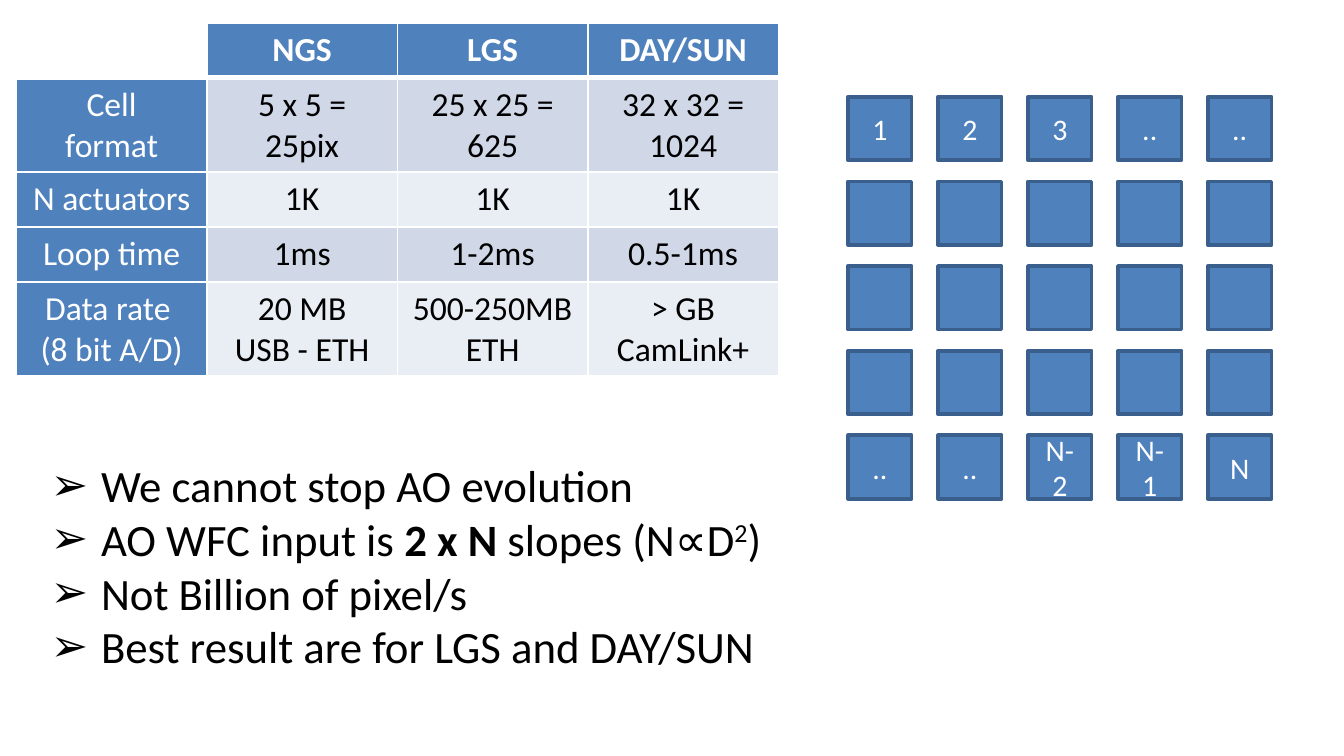
from lxml.etree import SubElement
from pptx import Presentation
from pptx.dml.color import RGBColor
from pptx.enum.shapes import MSO_SHAPE
from pptx.enum.text import MSO_ANCHOR, MSO_AUTO_SIZE, PP_ALIGN
from pptx.oxml.ns import qn
from pptx.util import Cm, Pt

BLUE = RGBColor(0x4F, 0x81, 0xBD)
EDGE = RGBColor(0x3A, 0x5F, 0x8C)
DARK = RGBColor(0xD0, 0xD8, 0xE8)
PALE = RGBColor(0xE9, 0xED, 0xF4)
WHITE = RGBColor(0xFF, 0xFF, 0xFF)
BLACK = RGBColor(0, 0, 0)

SPECS = [
    ["", "NGS", "LGS", "DAY/SUN"],
    ["Cell\nformat", "5 x 5 = 25pix", "25 x 25 = 625", "32 x 32 = 1024"],
    ["N actuators", "1K", "1K", "1K"],
    ["Loop time", "1ms", "1-2ms", "0.5-1ms"],
    ["Data rate \n(8 bit A/D)", "20 MB\nUSB - ETH", "500-250MB\nETH", "> GB\nCamLink+"],
]
HEIGHTS = [1.04, 1.76, 1.04, 1.04, 1.76]

SQUARES = [
    ["1", "2", "3", "..", ".."],
    [""] * 5,
    [""] * 5,
    [""] * 5,
    ["..", "..", "N-2", "N-1", "N"],
]

# Each point is a list of runs: text, bold, superscript
POINTS = [
    [("We cannot stop AO evolution", False, False)],
    [("AO WFC input is ", False, False), ("2 x N ", True, False),
     ("slopes (N∝D", False, False), ("2", False, True), (")", False, False)],
    [("Not Billion of pixel/s", False, False)],
    [("Best result are for LGS and DAY/SUN", False, False)],
]


def write(para, text, size=18, color=BLACK, bold=False, raised=False, align=None):
    run = para.add_run()
    run.text = text
    font = run.font
    font.name, font.size, font.bold = "Calibri", Pt(size), bold
    font.color.rgb = color
    if raised:
        run._r.get_or_add_rPr().set("baseline", "30000")
    if align is not None:
        para.alignment = align


def next_para(frame, index):
    return frame.add_paragraph() if index else frame.paragraphs[0]


def add_borders(cell, top=1, bottom=1):
    props = cell._tc.get_or_add_tcPr()
    for tag, width in (("lnL", 1), ("lnR", 1), ("lnT", top), ("lnB", bottom)):
        line = SubElement(props, qn(f"a:{tag}"), w=str(Pt(width)))
        fill = SubElement(line, qn("a:solidFill"))
        SubElement(fill, qn("a:srgbClr"), val=str(WHITE))


def add_bullet(para, indent):
    props = para._p.get_or_add_pPr()
    props.set("marL", str(indent))
    props.set("indent", str(-indent))
    SubElement(props, qn("a:buFont"), typeface="Arial")
    SubElement(props, qn("a:buChar"), char="➢")


def add_specs(slide, left, top, width):
    count = len(SPECS[0])
    table = slide.shapes.add_table(
        len(SPECS), count, left, top, width, Cm(sum(HEIGHTS))).table
    table.first_row = table.horz_banding = False
    for col in table.columns:
        col.width = int(width / count)
    for r, (texts, height) in enumerate(zip(SPECS, HEIGHTS)):
        table.rows[r].height = Cm(height)
        for c, text in enumerate(texts):
            cell = table.cell(r, c)
            add_borders(cell, top=3 if r == 1 else 1, bottom=3 if r == 0 else 1)
            head = r == 0 or c == 0
            if not text:
                cell.fill.background()
                continue
            cell.fill.solid()
            cell.fill.fore_color.rgb = BLUE if head else DARK if r % 2 else PALE
            for i, line in enumerate(text.split("\n")):
                write(next_para(cell.text_frame, i), line, bold=r == 0,
                      color=WHITE if head else BLACK, align=PP_ALIGN.CENTER)


def add_squares(slide, left, top, width, height):
    side = Cm(1.2)
    step_x = (width - side) / (len(SQUARES[0]) - 1)
    step_y = (height - side) / (len(SQUARES) - 1)
    for r, labels in enumerate(SQUARES):
        group = slide.shapes.add_group_shape()
        for c, label in enumerate(labels):
            box = group.shapes.add_shape(
                MSO_SHAPE.RECTANGLE, int(left + c * step_x),
                int(top + r * step_y), side, side)
            box.shadow.inherit = False
            box.fill.solid()
            box.fill.fore_color.rgb = BLUE
            box.line.color.rgb = EDGE
            box.line.width = Pt(2)
            if label:
                frame = box.text_frame
                frame.word_wrap = True
                frame.vertical_anchor = MSO_ANCHOR.MIDDLE
                write(frame.paragraphs[0], label, size=16, color=WHITE,
                      align=PP_ALIGN.CENTER)


def add_points(slide, left, top, width, height):
    frame = slide.shapes.add_textbox(left, top, width, height).text_frame
    frame.word_wrap = False
    frame.auto_size = MSO_AUTO_SIZE.SHAPE_TO_FIT_TEXT
    for i, runs in enumerate(POINTS):
        para = next_para(frame, i)
        add_bullet(para, Cm(0.95))
        for text, bold, raised in runs:
            write(para, text, size=24, bold=bold, raised=raised)


def main():
    deck = Presentation()
    deck.slide_width, deck.slide_height = Cm(25.4), Cm(14.29)
    slide = deck.slides.add_slide(deck.slide_layouts[6])
    add_squares(slide, Cm(16.03), Cm(1.83), Cm(8), Cm(7.6))
    add_points(slide, Cm(0.71), Cm(8.53), Cm(14.1), Cm(4.37))
    add_specs(slide, Cm(0.31), Cm(0.43), Cm(14.4))
    deck.save("out.pptx")


if __name__ == "__main__":
    main()
